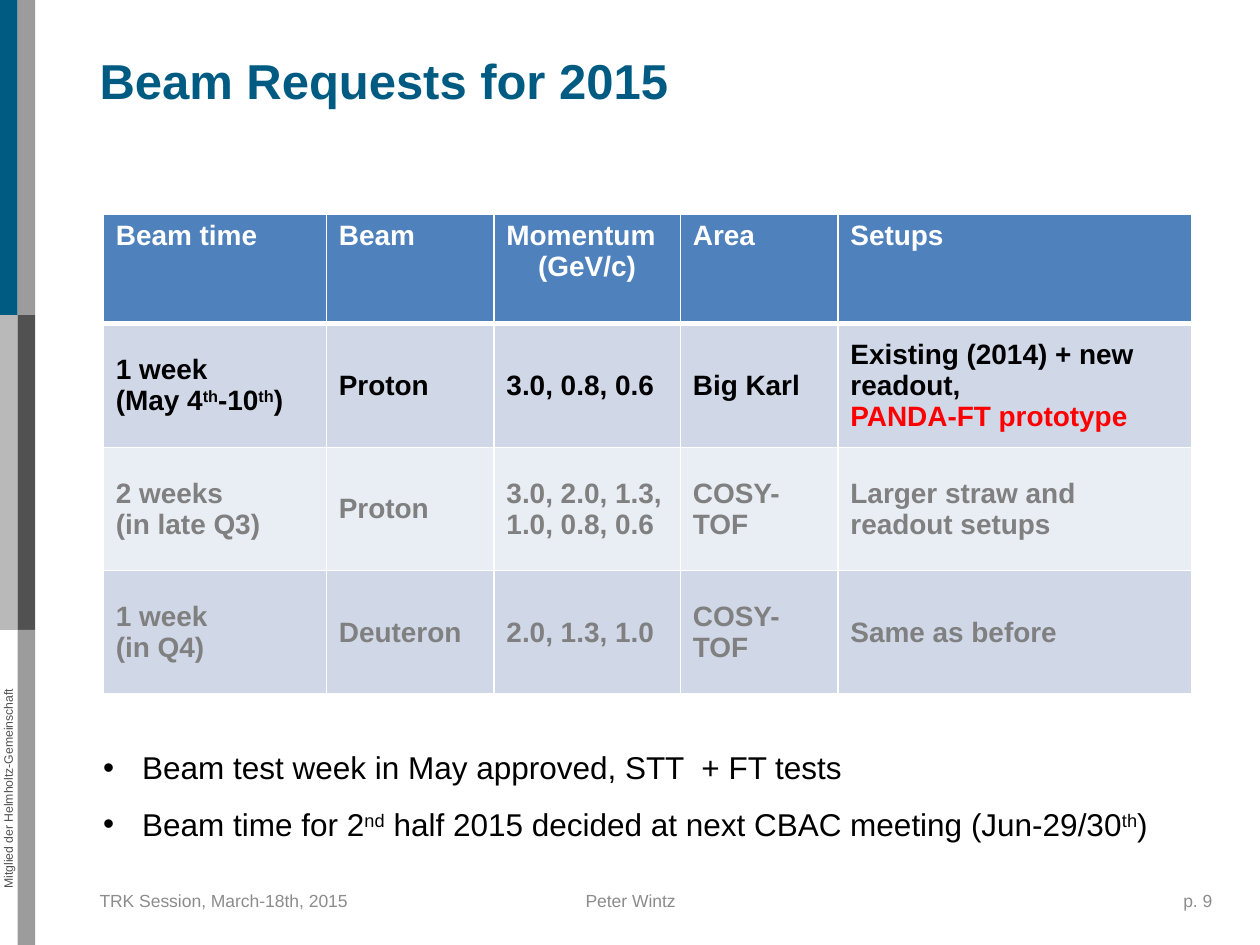
from lxml.etree import SubElement
from pptx import Presentation
from pptx.dml.color import RGBColor
from pptx.enum.shapes import MSO_SHAPE
from pptx.enum.text import MSO_ANCHOR as ANCHOR, PP_ALIGN as ALIGN
from pptx.oxml.ns import qn
from pptx.util import Inches, Pt

BLUE = RGBColor(0x00, 0x5B, 0x82)
LIGHT_GRAY = RGBColor(0xB9, 0xB9, 0xB9)
MID_GRAY = RGBColor(0x9C, 0x9C, 0x9C)
DARK_GRAY = RGBColor(0x51, 0x51, 0x51)
FOOTER_GRAY = RGBColor(0x8C, 0x8C, 0x8C)
TEXT_GRAY = RGBColor(0x80, 0x80, 0x80)
HEADER_FILL = RGBColor(0x4F, 0x81, 0xBD)
BAND_DARK = RGBColor(0xD0, 0xD8, 0xE8)
BAND_LIGHT = RGBColor(0xE9, 0xED, 0xF4)
WHITE = RGBColor(0xFF, 0xFF, 0xFF)
BLACK = RGBColor(0, 0, 0)
RED = RGBColor(0xFF, 0, 0)

# Carets enclose superscripts; each list item is one paragraph.
TITLE = ["Beam Requests for 2015"]
MEMBERSHIP = ["Mitglied der Helmholtz-Gemeinschaft"]
HEADER = [["Beam time"], ["Beam"], ["Momentum", "(GeV/c)"], ["Area"], ["Setups"]]
REQUESTS = [
    [["1 week", "(May 4^th^-10^th^)"], ["Proton"], ["3.0, 0.8, 0.6"], ["Big Karl"],
     ["Existing (2014) + new readout,", "PANDA-FT prototype"]],
    [["2 weeks", "(in late Q3)"], ["Proton"], ["3.0, 2.0, 1.3, 1.0, 0.8, 0.6"],
     ["COSY-TOF"], ["Larger straw and readout setups"]],
    [["1 week", "(in Q4)"], ["Deuteron"], ["2.0, 1.3, 1.0"], ["COSY-TOF"],
     ["Same as before"]],
]
ROW_FILLS = [HEADER_FILL, BAND_DARK, BAND_LIGHT, BAND_DARK]
ROW_COLORS = [WHITE, BLACK, TEXT_GRAY, TEXT_GRAY]
COL_WIDTHS = [1.77, 1.33, 1.48, 1.25, 2.81]
ROW_HEIGHTS = [0.87, 0.98, 0.98, 0.98]
NOTES = [
    "Beam test week in May approved, STT  + FT tests",
    "Beam time for 2^nd^ half 2015 decided at next CBAC meeting (Jun-29/30^th^)",
]
FOOTERS = [  # text, left, width, alignment, left margin
    ("TRK Session, March-18th, 2015", 0.79, 2.33, ALIGN.LEFT, 0),
    ("Peter Wintz", 3.42, 3.17, ALIGN.CENTER, 0.1),
    ("p. 9", 7.39, 2.33, ALIGN.RIGHT, 0.1),
]
STRIPES = [  # column, row, fill
    (0, 1, LIGHT_GRAY), (1, 1, DARK_GRAY), (0, 0, BLUE),
    (1, 0, MID_GRAY), (1, 2, MID_GRAY),
]
STRIPE_W, STRIPE_H = 0.14, 2.5


def inches(*values):
    return [Inches(v) for v in values]


def set_margins(tf, left=0.1, top=0.05, right=0.1, bottom=0.05):
    tf.margin_left, tf.margin_top, tf.margin_right, tf.margin_bottom = inches(
        left, top, right, bottom)


def add_bullet(p, indent):
    pPr = p._p.get_or_add_pPr()
    pPr.set("marL", str(Inches(indent)))
    pPr.set("indent", str(-Inches(indent)))
    SubElement(pPr, qn("a:buFont")).set("typeface", "Arial")
    SubElement(pPr, qn("a:buChar")).set("char", "•")


def write(tf, lines, size, color, bold=False, align=ALIGN.LEFT, spacing=None,
          indent=None):
    for i, line in enumerate(lines):
        p = tf.paragraphs[0] if i == 0 else tf.add_paragraph()
        p.alignment = align
        p.space_before = Pt(0)
        if spacing:
            p.line_spacing = spacing
        if indent:
            add_bullet(p, indent)
        for j, part in enumerate(line.split("^")):
            if not part:
                continue
            r = p.add_run()
            r.text = part
            r.font.name, r.font.size, r.font.bold = "Arial", Pt(size), bold
            r.font.color.rgb = color
            if j % 2:
                r.font._element.set("baseline", "30000")


def add_text(slide, box, lines, anchor=ANCHOR.TOP, margins=None, **fmt):
    s = slide.shapes.add_textbox(*inches(*box))
    tf = s.text_frame
    tf.word_wrap = True
    tf.vertical_anchor = anchor
    set_margins(tf, **(margins or {}))
    write(tf, lines, **fmt)
    return s


def set_borders(cell, **widths):
    tcPr = cell._tc.get_or_add_tcPr()
    for i, side in enumerate("LRTB"):
        ln = SubElement(tcPr, qn("a:ln" + side), w=str(Pt(widths.get(side, 1))))
        fill = SubElement(ln, qn("a:solidFill"))
        SubElement(fill, qn("a:srgbClr")).set("val", str(WHITE))
        tcPr.insert(i, ln)


def add_stripes(slide):
    for col, row, color in STRIPES:
        s = slide.shapes.add_shape(MSO_SHAPE.RECTANGLE, *inches(
            col * STRIPE_W, row * STRIPE_H, STRIPE_W, STRIPE_H))
        s.shadow.inherit = False
        s.fill.solid()
        s.fill.fore_color.rgb = color
        s.line.fill.background()


def add_request_table(slide):
    rows = [HEADER] + REQUESTS
    box = inches(0.82, 1.7, sum(COL_WIDTHS), sum(ROW_HEIGHTS))
    table = slide.shapes.add_table(len(rows), len(HEADER), *box).table
    for col, width in zip(table.columns, COL_WIDTHS):
        col.width = Inches(width)
    for i, row in enumerate(rows):
        table.rows[i].height = Inches(ROW_HEIGHTS[i])
        for j, lines in enumerate(row):
            cell = table.cell(i, j)
            cell.vertical_anchor = ANCHOR.MIDDLE if i else ANCHOR.TOP
            cell.fill.solid()
            cell.fill.fore_color.rgb = ROW_FILLS[i]
            set_borders(cell, T=3 if i == 1 else 1, B=1 if i else 3)
            write(cell.text_frame, lines, 16, ROW_COLORS[i], bold=True)
    table.cell(0, 2).text_frame.paragraphs[1].alignment = ALIGN.CENTER
    prototype = table.cell(1, 4).text_frame.paragraphs[1]
    prototype.runs[0].font.color.rgb = RED


def main():
    prs = Presentation()
    prs.slide_width, prs.slide_height = inches(10, 7.5)
    slide = prs.slides.add_slide(prs.slide_layouts[5])
    no_margins = dict(left=0, top=0, right=0, bottom=0)

    add_stripes(slide)
    side = add_text(slide, (-1.18, 6.2, 2.49, 0.12), MEMBERSHIP, margins=no_margins,
                    size=7, color=DARK_GRAY, align=ALIGN.CENTER)
    side.rotation = 270

    title = slide.shapes.title
    title.left, title.top, title.width, title.height = inches(0.79, 0.4, 8.94, 0.63)
    title.text_frame.vertical_anchor = ANCHOR.TOP
    set_margins(title.text_frame, **no_margins)
    write(title.text_frame, TITLE, 28, BLUE, bold=True)

    for text, left, width, align, margin in FOOTERS:
        add_text(slide, (left, 6.95, width, 0.4), [text], anchor=ANCHOR.MIDDLE,
                 margins=dict(left=margin), size=10, color=FOOTER_GRAY, align=align)

    add_request_table(slide)
    add_text(slide, (0.72, 5.74, 8.56, 1.01), NOTES, size=18, color=BLACK,
             spacing=1.5, indent=0.31)
    prs.save("out.pptx")


if __name__ == "__main__":
    main()
